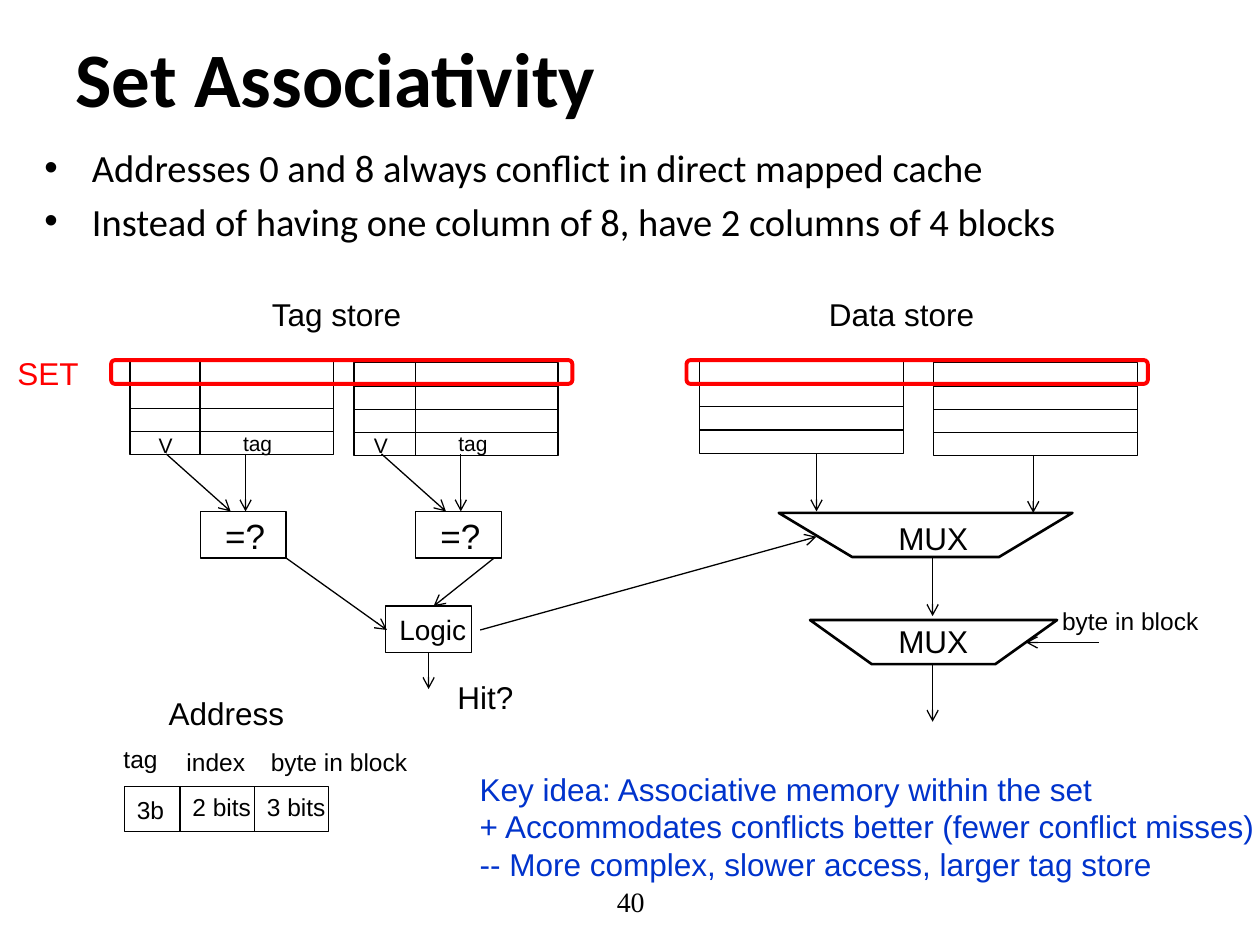
from dataclasses import dataclass

from lxml import etree
from pptx import Presentation
from pptx.dml.color import RGBColor
from pptx.enum import shapes, text
from pptx.oxml import ns
from pptx.util import Cm, Pt

BLACK = RGBColor(0x00, 0x00, 0x00)
RED = RGBColor(0xFF, 0x00, 0x00)
BLUE = RGBColor(0x00, 0x33, 0xCC)

ROW_HEIGHT = 0.47
BANK_WIDTH = 4.11
ROWS = 4
WAY_SHIFT = 4.34
RECT = shapes.MSO_SHAPE.RECTANGLE
ROUNDED = shapes.MSO_SHAPE.ROUNDED_RECTANGLE


@dataclass
class Label:
    """Unwrapped text; all lengths are in centimetres."""
    words: str
    left: float
    top: float
    width: float
    height: float = 1.02
    size: int = 18
    color: RGBColor = BLACK
    font: str = "Arial"


@dataclass
class Line:
    x1: float
    y1: float
    x2: float
    y2: float
    arrow: bool = True


@dataclass
class Mux:
    left: float
    top: float
    width: float
    height: float = 0.89


BANKS = [(2.62, 7.29), (7.14, 7.31), (14.10, 7.26), (18.82, 7.31)]
SET_MARKS = [2.24, 13.84]
MUXES = [Mux(15.70, 10.34, 5.92), Mux(16.33, 12.50, 4.98)]

LABELS = [
    Label("Tag store", 5.23, 5.82, 3.15),
    Label("Data store", 16.46, 5.82, 3.45),
    Label("SET", 0.10, 7.01, 1.75, color=RED),
    Label("MUX", 17.86, 10.34, 1.93),
    Label("MUX", 17.86, 12.42, 1.93),
    Label("byte in block", 21.16, 12.09, 3.28, 0.86, 14),
    Label("Logic", 7.80, 12.22, 1.88, 0.94, 16),
    Label("Hit?", 8.97, 13.54, 1.65),
    Label("Address", 3.15, 13.87, 2.87),
    Label("tag", 2.24, 14.88, 1.19, 0.86, 14),
    Label("index", 3.51, 14.94, 1.70, 0.86, 14),
    Label("byte in block", 5.21, 14.94, 3.28, 0.86, 14),
    Label("3b", 2.51, 15.90, 1.07, 0.86, 14),
    Label("2 bits", 3.63, 15.85, 1.70, 0.86, 14),
    Label("3 bits", 5.13, 15.85, 1.70, 0.86, 14),
    Label("Key idea: Associative memory within the set\n"
          "+ Accommodates conflicts better (fewer conflict misses)\n"
          "-- More complex, slower access, larger tag store",
          9.42, 15.39, 16.28, 3.33, color=BLUE),
]

LINES = [
    Line(16.46, 9.14, 16.46, 10.31),
    Line(20.83, 9.17, 20.83, 10.34),
    Line(5.77, 11.25, 7.80, 12.70),
    Line(9.96, 11.25, 8.74, 12.22),
    Line(9.68, 12.70, 16.46, 10.82),
    Line(18.80, 11.25, 18.80, 12.42),
    Line(22.15, 12.95, 20.68, 12.95),
    Line(18.80, 13.39, 18.80, 14.55),
    Line(8.64, 13.16, 8.64, 13.89),
    Line(3.63, 15.85, 3.63, 16.78, arrow=False),
    Line(5.13, 15.85, 5.13, 16.78, arrow=False),
]


def format_text(frame, font: str, size: int, color: RGBColor, bold: bool = False) -> None:
    for para in frame.paragraphs:
        for span in para.runs:
            span.font.name = font
            span.font.size = Pt(size)
            span.font.bold = bold
            span.font.color.rgb = color


def outline(shape, color: RGBColor = BLACK, weight: float = 0.75) -> None:
    shape.shadow.inherit = False
    shape.fill.background()
    shape.line.color.rgb = color
    shape.line.width = Pt(weight)


def draw_box(page, left: float, top: float, width: float, height: float, kind=RECT):
    box = page.shapes.add_shape(kind, Cm(left), Cm(top), Cm(width), Cm(height))
    outline(box)
    return box


def draw_label(page, label: Label):
    box = page.shapes.add_textbox(Cm(label.left), Cm(label.top), Cm(label.width), Cm(label.height))
    frame = box.text_frame
    frame.word_wrap = False
    frame.text = label.words
    format_text(frame, label.font, label.size, label.color)
    return frame


def draw_line(page, line: Line) -> None:
    connector = page.shapes.add_connector(
        shapes.MSO_CONNECTOR.STRAIGHT, Cm(line.x1), Cm(line.y1), Cm(line.x2), Cm(line.y2))
    connector.line.color.rgb = BLACK
    connector.line.width = Pt(0.75)
    if line.arrow:
        etree.SubElement(connector.line._get_or_add_ln(), ns.qn("a:tailEnd"), type="arrow")
    etree.SubElement(connector._element.spPr, ns.qn("a:effectLst"))


def draw_mux(page, mux: Mux) -> None:
    """Draw a trapezoid whose lower side is half as long as its upper side."""
    right, bottom, inset = mux.left + mux.width, mux.top + mux.height, mux.width / 4
    builder = page.shapes.build_freeform(Cm(right), Cm(mux.top))
    corners = [(right - inset, bottom), (mux.left + inset, bottom), (mux.left, mux.top)]
    builder.add_line_segments([(Cm(x), Cm(y)) for x, y in corners], close=True)
    outline(builder.convert_to_shape(), weight=1.5)


def draw_comparator(page, shift: float) -> None:
    """Draw one way's V and tag fields with the comparator they feed."""
    draw_line(page, Line(4.03 + shift, 7.27, 4.03 + shift, 9.17, arrow=False))
    draw_label(page, Label("V", 2.95 + shift, 8.59, 0.79, 0.76, 12))
    draw_label(page, Label("tag", 4.65 + shift, 8.55, 1.12, 0.76, 12))
    draw_box(page, 4.04 + shift, 10.31, 1.73, 0.94)
    draw_label(page, Label("=?", 4.29 + shift, 10.24, 1.32, 1.12, 20))
    draw_line(page, Line(3.35 + shift, 9.15, 4.65 + shift, 10.31))
    draw_line(page, Line(4.95 + shift, 9.15, 4.95 + shift, 10.31))


def place(shape, left: float, top: float, width: float, height: float) -> None:
    shape.left, shape.top, shape.width, shape.height = Cm(left), Cm(top), Cm(width), Cm(height)


def fill_placeholders(page) -> None:
    title, body = page.shapes.title, page.placeholders[1]
    place(title, 1.27, -0.05, 22.86, 3.18)
    title.text_frame.text = "Set Associativity"
    title.text_frame.vertical_anchor = text.MSO_ANCHOR.MIDDLE
    title.text_frame.paragraphs[0].alignment = text.PP_ALIGN.LEFT
    format_text(title.text_frame, "Calibri", 44, BLACK, bold=True)

    place(body, 0.64, 2.77, 23.93, 14.43)
    body.text_frame.text = ("Addresses 0 and 8 always conflict in direct mapped cache\n"
                            "Instead of having one column of 8, have 2 columns of 4 blocks")
    for para in body.text_frame.paragraphs:
        properties = para._p.get_or_add_pPr()
        properties.set("marL", str(Cm(0.96)))
        properties.set("indent", str(Cm(-0.96)))
    format_text(body.text_frame, "Calibri", 22, BLACK)


def main() -> None:
    deck = Presentation()
    deck.slide_width, deck.slide_height = Cm(25.4), Cm(19.05)
    page = deck.slides.add_slide(deck.slide_layouts[1])
    fill_placeholders(page)

    for left, top in BANKS:
        for row in range(ROWS):
            draw_box(page, left, top + row * ROW_HEIGHT, BANK_WIDTH, ROW_HEIGHT)
    for shift in (0, WAY_SHIFT):
        draw_comparator(page, shift)
    draw_box(page, 7.77, 12.22, 1.73, 0.94)
    draw_box(page, 2.51, 15.85, BANK_WIDTH, 0.91)
    for mux in MUXES:
        draw_mux(page, mux)
    for line in LINES:
        draw_line(page, line)
    for label in LABELS:
        draw_label(page, label)
    for left in SET_MARKS:
        outline(draw_box(page, left, 7.26, 9.30, 0.48, ROUNDED), RED, 2.25)

    number = draw_label(page, Label("40", 8.69, 17.65, 8.05, size=16, font="Times New Roman"))
    number.word_wrap = True
    number.vertical_anchor = text.MSO_ANCHOR.MIDDLE
    number.paragraphs[0].alignment = text.PP_ALIGN.CENTER
    deck.save("out.pptx")


if __name__ == "__main__":
    main()
